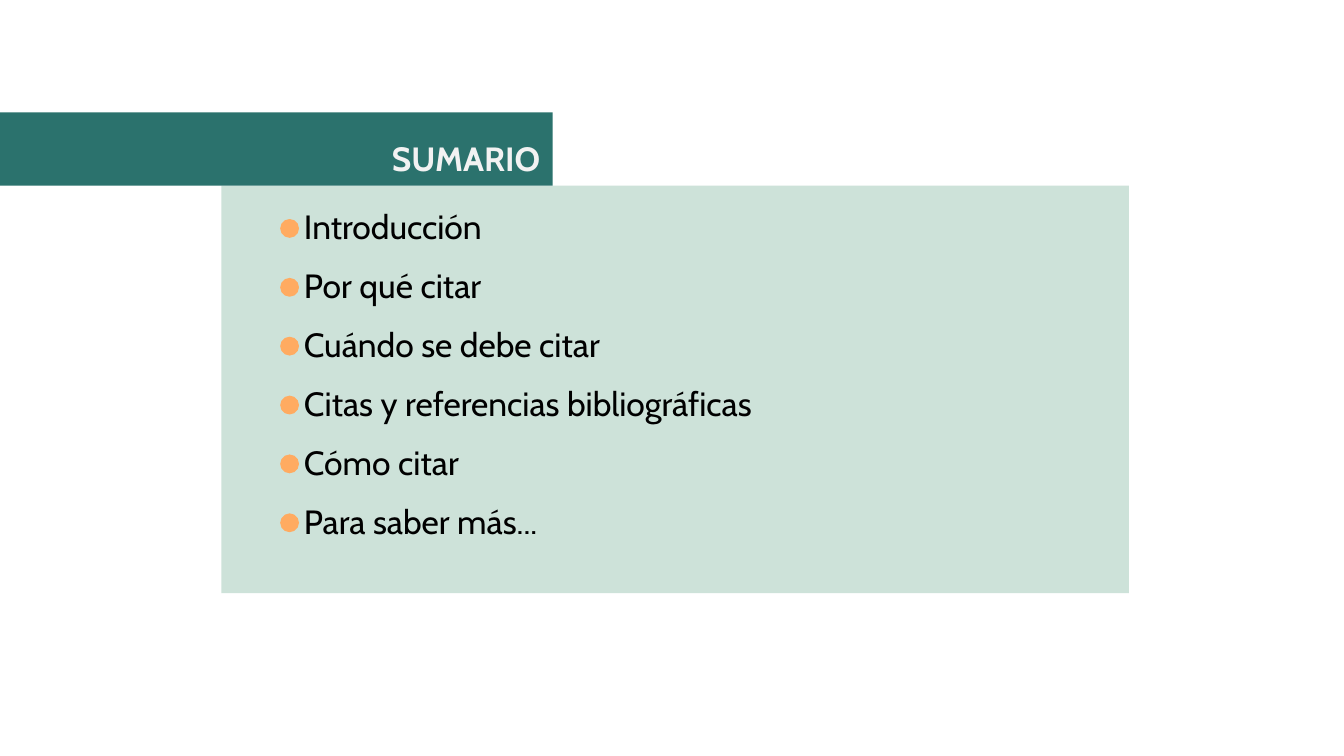
from dataclasses import dataclass
from typing import NamedTuple

from lxml.etree import SubElement as Sub
from pptx import Presentation
from pptx.dml.color import RGBColor as Rgb
from pptx.enum.shapes import MSO_SHAPE as Kind
from pptx.enum.text import MSO_ANCHOR as Anchor, MSO_AUTO_SIZE as Fit, PP_ALIGN as Align
from pptx.oxml.ns import qn
from pptx.util import Inches, Pt

CELL = Inches(0.1)
COLS, ROWS = 100, 56.25


@dataclass(frozen=True)
class Theme:
    font: str = "Cabin"
    size: int = 18
    gap: int = 10
    panel: str = "CDE2D9"
    band: str = "2B726D"
    head: str = "F2F2F2"
    body: str = "000000"
    dot: str = "FFAB61"


class Box(NamedTuple):
    col: float
    row: float
    wide: float
    high: float


LOOK = Theme()
TOPICS = [
    "Introducción",
    "Por qué citar",
    "Cuándo se debe citar",
    "Citas y referencias bibliográficas",
    "Cómo citar",
    "Para saber más...",
]
PANEL = Box(16.48, 13.82, 67.52, 30.32)
BAND = Box(0, 8.36, 41.12, 5.46)
HEAD = Box(18, 9.24, 23.2, 3.6)
LIST = Box(18.8, 14.3, 63.4, 28.4)
DOT = Box(20.85, 16.3, 1.4, 1.4)
STEP = 4.38
INDENT = 2.82


def span(units: float) -> int:
    return round(units * CELL)


def place(item, box: Box) -> None:
    item.left, item.top, item.width, item.height = map(span, box)


def draw(slide, kind, box: Box, color: str):
    shape = slide.shapes.add_shape(kind, *map(span, box))
    shape.shadow.inherit = False
    shape.fill.solid()
    shape.fill.fore_color.rgb = Rgb.from_string(color)
    shape.line.fill.background()
    return shape


def frame(holder, box: Box):
    place(holder, box)
    text = holder.text_frame
    text.word_wrap = True
    text.auto_size = Fit.NONE
    text.vertical_anchor = Anchor.TOP
    text.margin_left = text.margin_right = CELL
    text.margin_top = text.margin_bottom = CELL
    return text


def write(para, words: str, color: str, bold: bool = False) -> None:
    para.line_spacing = 1.0
    para.space_after = Pt(0)
    run = para.add_run()
    run.text = words
    run.font.name = LOOK.font
    run.font.size = Pt(LOOK.size)
    run.font.bold = bold
    run.font.color.rgb = Rgb.from_string(color)


def main() -> None:
    deck = Presentation()
    deck.slide_width, deck.slide_height = span(COLS), span(ROWS)
    slide = deck.slides.add_slide(deck.slide_layouts[1])
    title, body = slide.placeholders

    panel = draw(slide, Kind.RECTANGLE, PANEL, LOOK.panel)
    band = draw(slide, Kind.RECTANGLE, BAND, LOOK.band)
    for back in (panel, band):
        title.element.addprevious(back.element)

    para = frame(title, HEAD).paragraphs[0]
    para.alignment = Align.RIGHT
    write(para, "SUMARIO", LOOK.head, bold=True)

    text = frame(body, LIST)
    for num, topic in enumerate(TOPICS):
        para = text.add_paragraph() if num else text.paragraphs[0]
        props = para._p.get_or_add_pPr()
        props.set("marL", str(span(INDENT)))
        props.set("indent", "0")
        Sub(props, qn("a:buNone"))
        para.space_before = Pt(LOOK.gap if num else 0)
        write(para, topic, LOOK.body)
        draw(slide, Kind.OVAL, DOT._replace(row=DOT.row + num * STEP), LOOK.dot)

    deck.save("out.pptx")


if __name__ == "__main__":
    main()
